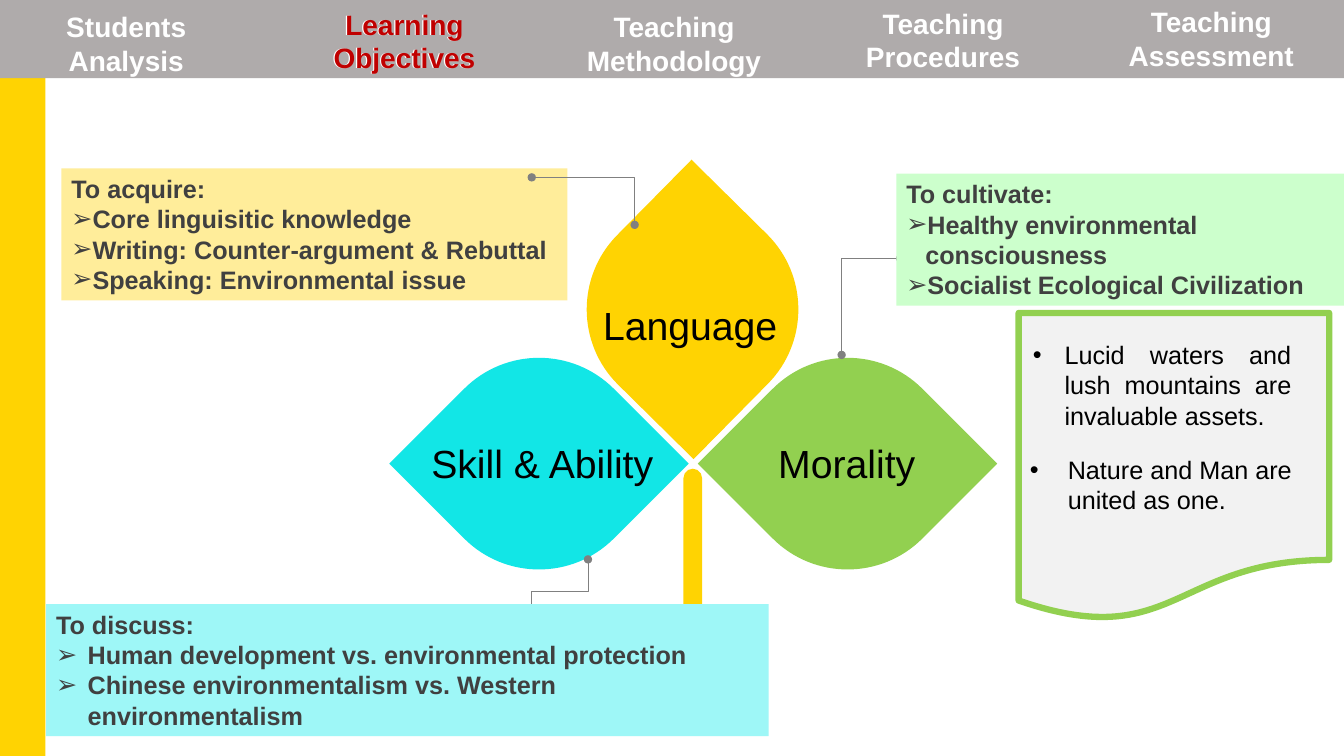
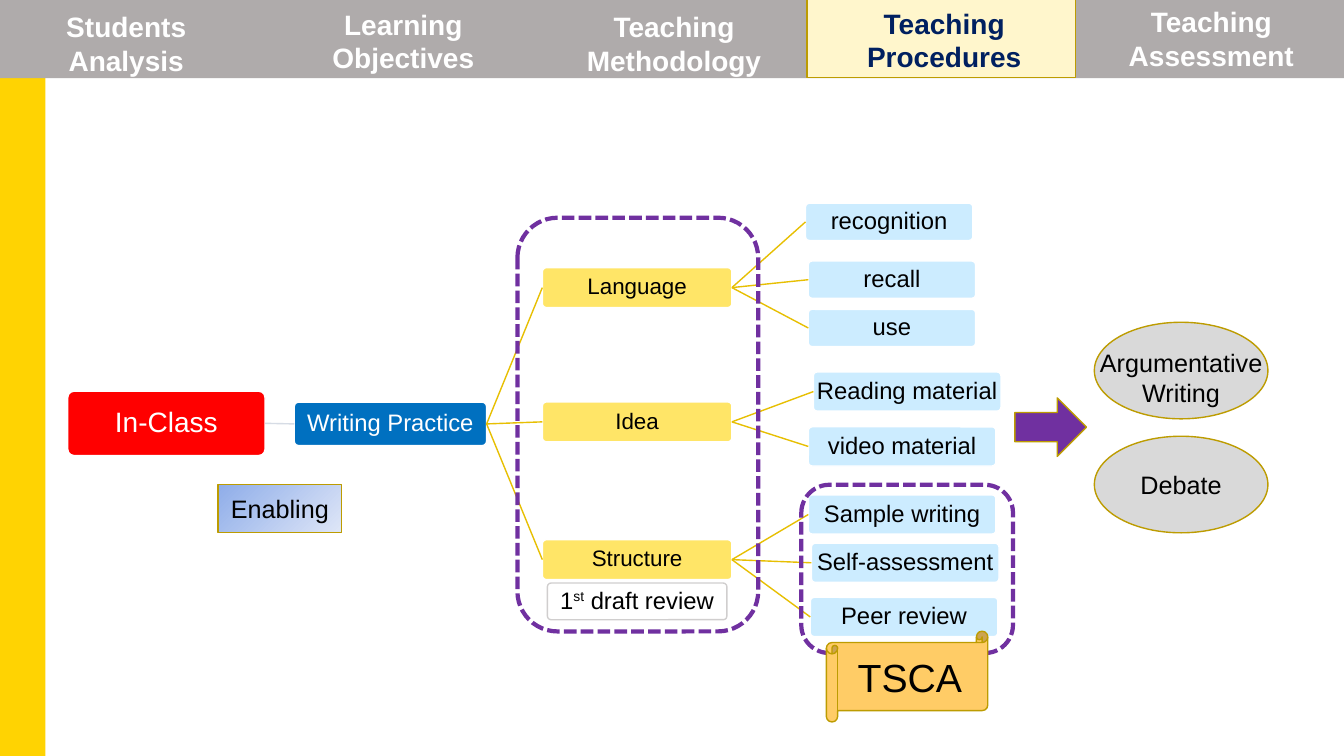
from dataclasses import dataclass

import pptx
import pptx.dml.color
import pptx.enum.dml
import pptx.enum.shapes
import pptx.enum.text
import pptx.oxml.ns
import pptx.util
from lxml import etree

Pt = pptx.util.Pt
SHAPES = pptx.enum.shapes.MSO_SHAPE
CONNECTORS = pptx.enum.shapes.MSO_CONNECTOR
ALIGN = pptx.enum.text.PP_ALIGN
ANCHOR = pptx.enum.text.MSO_ANCHOR
qn = pptx.oxml.ns.qn


@dataclass(frozen=True)
class Theme:
    font: str = "Arial"
    # Colours
    yellow: str = "FFD302"
    band: str = "AFABAB"
    white: str = "FFFFFF"
    black: str = "000000"
    dark: str = "404040"
    red: str = "C00000"
    navy: str = "002060"
    gold: str = "BD9C01"
    branch_line: str = "E7BF02"
    root_line: str = "D6DCE5"
    purple: str = "7030A0"
    green: str = "92D050"
    cyan: str = "12E6E6"
    grey: str = "808080"
    # Type sizes
    display: int = 28
    heading: int = 20
    body: int = 18
    node: int = 17
    branch: int = 16


THEME = Theme()
BAND_HEIGHT = 55.9
NODE_INSETS = (1, 1, 1, 1)
DEFAULT_INSETS = (7.2, 3.6, 7.2, 3.6)

# Tab text lines, left, top and width
TABS = [
    (["Students", "Analysis"], 0, 3.6, 191.5),
    (["Learning Objectives"], 192.4, 1.6, 191.5),
    (["Teaching Methodology"], 384.6, 3.6, 193.7),
    (["Teaching Procedures"], 576.8, 0.8, 193.7),
    (["Teaching Assessment"], 770.6, 0, 189.4),
]

# Branch: text, top, leaf size, leaves as (text, left, top)
BRANCHES = [
    ("Language", 191.2, (119.5, 26.6), [
        ("recognition", 575.4, 145.2),
        ("recall", 577.4, 186.5),
        ("use", 577.4, 221)]),
    ("Idea", 287.1, (134, 28), [
        ("Reading material", 581, 265.7),
        ("video material", 577.4, 304.9)]),
    ("Structure", 385.5, (134, 28), [
        ("Sample writing", 577.4, 353.5),
        ("Self-assessment", 579.6, 388),
        ("Peer review", 578.8, 426.7)]),
]


def rgb(color):
    return pptx.dml.color.RGBColor.from_string(color)


# Text
def set_font(font, size, color, bold=False):
    font.name = THEME.font
    font.size = Pt(size)
    font.bold = bold
    font.color.rgb = rgb(color)


def write(shape, lines, size, color=THEME.black, bold=False, align=ALIGN.CENTER,
          anchor=ANCHOR.MIDDLE, insets=DEFAULT_INSETS, wrap=True):
    frame = shape.text_frame
    frame.word_wrap = wrap
    frame.vertical_anchor = anchor
    (frame.margin_left, frame.margin_top,
     frame.margin_right, frame.margin_bottom) = map(Pt, insets)
    frame.text = "\n".join(lines)
    for paragraph in frame.paragraphs:
        paragraph.alignment = align
        for run in paragraph.runs:
            set_font(run.font, size, color, bold)
    return frame.paragraphs


def add_bullet(paragraph, character, indent):
    properties = paragraph._p.get_or_add_pPr()
    properties.set("marL", str(Pt(indent)))
    properties.set("indent", str(-Pt(indent)))
    etree.SubElement(properties, qn("a:buFont")).set("typeface", THEME.font)
    etree.SubElement(properties, qn("a:buChar")).set("char", character)


def add_label(slide, box, lines, size, color=THEME.black, bold=False, align=ALIGN.CENTER):
    label = slide.shapes.add_textbox(*map(Pt, box))
    return write(label, lines, size, color, bold, align, ANCHOR.TOP)


# Shapes and lines
def paint(shape, fill=None, line=None, width=1):
    shape.shadow.inherit = False
    if fill:
        shape.fill.solid()
        shape.fill.fore_color.rgb = rgb(fill)
    else:
        shape.fill.background()
    if line:
        shape.line.color.rgb = rgb(line)
        shape.line.width = Pt(width)
    else:
        shape.line.fill.background()


def add_block(slide, kind, box, fill=None, line=None, width=1):
    shape = slide.shapes.add_shape(kind, *map(Pt, box))
    paint(shape, fill, line, width)
    return shape


def add_line(slide, kind, begin, end, color, width):
    line = slide.shapes.add_connector(kind, *map(Pt, (*begin, *end)))
    line.line.color.rgb = rgb(color)
    line.line.width = Pt(width)
    etree.SubElement(line._element.spPr, qn("a:effectLst"))
    return line


def add_elbow(slide, begin, end, bend, upright=False):
    """Elbow with dotted ends; an upright one leaves its start vertically."""
    if upright:
        middle_x, middle_y = (begin[0] + end[0]) / 2, (begin[1] + end[1]) / 2
        begin, end = [(middle_x + y - middle_y, middle_y - x + middle_x)
                      for x, y in (begin, end)]
    line = add_line(slide, CONNECTORS.ELBOW, begin, end, THEME.grey, 0.5)
    properties = line._element.spPr
    if upright:
        properties.find(qn("a:xfrm")).set("rot", str(90 * 60000))
    guide = etree.SubElement(properties.find(qn("a:prstGeom")).find(qn("a:avLst")), qn("a:gd"))
    guide.set("name", "adj1")
    guide.set("fmla", f"val {round(bend * 100000)}")
    outline = properties.find(qn("a:ln"))
    for tag in ("a:headEnd", "a:tailEnd"):
        etree.SubElement(outline, qn(tag)).set("type", "oval")


def add_leaf(slide, center, rotation, fill):
    """Square with two opposite corners rounded off, turned onto its tip."""
    radius = 75.6
    corners = [(1, -1), (1, 0), (0, 1), (-1, 1), (-1, 0), (0, -1)]
    points = [(Pt(center[0] + x * radius), Pt(center[1] + y * radius)) for x, y in corners]
    builder = slide.shapes.build_freeform(*points[0], scale=1.0)
    builder.add_line_segments(points[1:], close=True)
    leaf = builder.convert_to_shape()
    # Turn the two diagonal cuts into quarter circles
    pull = 0.5523
    segments = list(leaf._element.iter(qn("a:lnTo")))
    for segment, controls in ((segments[1], [(1, pull), (pull, 1)]),
                              (segments[4], [(-1, -pull), (-pull, -1)])):
        segment.tag = qn("a:cubicBezTo")
        for index, (x, y) in enumerate(controls):
            control = etree.Element(qn("a:pt"))
            control.set("x", str(Pt((x + 1) * radius)))
            control.set("y", str(Pt((y + 1) * radius)))
            segment.insert(index, control)
    paint(leaf, fill)
    leaf.rotation = rotation


def add_goal(slide, box, fill, lines, indent):
    goal = add_block(slide, SHAPES.RECTANGLE, box, fill)
    paragraphs = write(goal, lines, THEME.body, THEME.dark, True, ALIGN.LEFT, ANCHOR.TOP)
    for paragraph in paragraphs[1:]:
        add_bullet(paragraph, "➢", indent)


def add_saying(slide, box, text, align, indent):
    add_bullet(add_label(slide, box, [text], THEME.body, align=align)[0], "•", indent)


def add_node(slide, box, text, fill, size=THEME.node, color=THEME.black, line=THEME.white):
    node = add_block(slide, SHAPES.ROUNDED_RECTANGLE, box, fill, line)
    node.adjustments[0] = 0.1
    for paragraph in write(node, [text], size, color, insets=NODE_INSETS):
        paragraph.line_spacing = 0.9
    return node


def link(slide, parent, child, color=THEME.branch_line):
    line = add_line(slide, CONNECTORS.STRAIGHT, (0, 0), (0, 0), color, 1)
    line.begin_connect(parent, 3)
    line.end_connect(child, 1)


def add_dashed_frame(slide, box):
    frame = add_block(slide, SHAPES.ROUNDED_RECTANGLE, box, None, THEME.purple, 3)
    frame.line.dash_style = pptx.enum.dml.MSO_LINE.SQUARE_DOT


# Shared parts
def start_slide(presentation):
    slide = presentation.slides.add_slide(presentation.slide_layouts[6])
    add_block(slide, SHAPES.RECTANGLE, (0, 0, 32.4, 540), THEME.yellow)
    return slide


def add_tabs(slide, active, active_color, active_fill=None):
    """Tab row; the active tab gets a filled box or a white edge on its text."""
    add_block(slide, SHAPES.RECTANGLE, (0, 0, 960, BAND_HEIGHT), THEME.band)
    for index, (lines, left, top, width) in enumerate(TABS):
        box = (left, top, width, 55.4)
        if index == active and active_fill:
            add_block(slide, SHAPES.RECTANGLE, (576.4, -0.6, 192, BAND_HEIGHT),
                      active_fill, THEME.gold)
        else:
            paragraphs = add_label(slide, box, lines, THEME.heading, THEME.white, True)
            if index == 0:
                paragraphs[0]._p.get_or_add_pPr().set("marR", str(Pt(11.1)))
        if index == active:
            add_label(slide, (left + 0.8, *box[1:]), lines, THEME.heading, active_color, True)


# Slides
def build_objectives(presentation):
    slide = start_slide(presentation)

    # Three leaves around a hub, with a stem
    hub_x, hub_y, reach = 495.2, 331.2, 110.2
    add_leaf(slide, (hub_x - 0.5, hub_y - reach), -45.4, THEME.yellow)
    add_leaf(slide, (hub_x + reach, hub_y), 45, THEME.green)
    add_leaf(slide, (hub_x - reach, hub_y), 45, THEME.cyan)
    stem = add_block(slide, SHAPES.ROUND_2_SAME_RECTANGLE, (488.2, 334.8, 13.3, 111.6),
                     THEME.yellow)
    stem.adjustments[0] = 0.5
    for text, left, top, width, align in (
            ("Language", 415.2, 211.9, 155.5, ALIGN.CENTER),
            ("Morality", 548.8, 310.3, 113, ALIGN.LEFT),
            ("Skill & Ability", 250.4, 310.3, 223.2, ALIGN.RIGHT)):
        add_label(slide, (left, top, width, 41), [text], THEME.display, align=align)

    # Goals and their pointers
    add_elbow(slide, (643, 184.6), (601.2, 253.5), 0.998)
    add_elbow(slide, (379.8, 445.7), (420, 399.6), 0.5, upright=True)
    add_goal(slide, (43.9, 120.3, 361.4, 94.3), "FFED9A",
             ["To acquire:", "Core linguisitic knowledge",
              "Writing: Counter-argument & Rebuttal", "Speaking: Environmental issue"], 14)
    add_elbow(slide, (379.8, 126.7), (453.3, 160.6), 0.999)
    add_goal(slide, (33, 431.6, 516, 94.3), "9EF7F7",
             ["To discuss:", "Human development vs. environmental protection",
              "Chinese environmentalism vs. Western environmentalism"], 22.5)
    add_goal(slide, (640.3, 124.1, 319.7, 94.3), "CCFFCC",
             ["To cultivate:", "Healthy environmental consciousness",
              "Socialist Ecological Civilization"], 13.6)

    # Sayings
    add_block(slide, SHAPES.FLOWCHART_DOCUMENT, (727.6, 223.5, 221.8, 220),
              "F2F2F2", THEME.green, 4.5)
    add_saying(slide, (730.8, 239, 198.7, 94.3),
               "Lucid waters and lush mountains are invaluable assets.", ALIGN.JUSTIFY, 22.5)
    add_saying(slide, (728.6, 321.1, 219.6, 51.1),
               "Nature and Man are united as one.", ALIGN.LEFT, 27)

    add_tabs(slide, 1, THEME.red)


def build_procedures(presentation):
    slide = start_slide(presentation)

    # Tree
    root = add_node(slide, (48.4, 279.4, 141, 46), "In-Class", "FF0000",
                    THEME.heading, THEME.white)
    practice = add_node(slide, (210.2, 287.3, 137.4, 31), "Writing Practice", "0070C0",
                        color=THEME.white)
    link(slide, root, practice, THEME.root_line)
    for text, top, leaf_size, leaves in BRANCHES:
        branch = add_node(slide, (387.4, top, 135.4, 28.5), text, "FFE567", THEME.branch)
        link(slide, practice, branch)
        for leaf_text, leaf_left, leaf_top in leaves:
            leaf = add_node(slide, (leaf_left, leaf_top, *leaf_size), leaf_text, "CCECFF")
            link(slide, branch, leaf)

    # Review note with a raised ordinal
    review = add_node(slide, (391, 416.5, 128.2, 26.2), "1", THEME.white, line="D0CECE")
    for text, baseline in (("st", 30000), (" draft review", 0)):
        run = review.text_frame.paragraphs[0].add_run()
        run.text = text
        set_font(run.font, THEME.node, THEME.black)
        run.font._element.set("baseline", str(baseline))

    # Frames and tags
    add_dashed_frame(slide, (572.4, 346.3, 151.2, 120.2))
    add_dashed_frame(slide, (369.6, 155.5, 172, 295.5))
    scroll = add_block(slide, SHAPES.HORIZONTAL_SCROLL, (590.3, 450.9, 115.3, 64.8),
                       "FFCC66", THEME.gold)
    write(scroll, ["TSCA"], THEME.display)
    enabling = add_block(slide, SHAPES.FLOWCHART_PROCESS, (155.7, 346.2, 88.3, 34),
                         "8FADE9", THEME.gold)
    enabling.fill.gradient()
    enabling.fill.gradient_angle = 315
    for stop, color in zip(enabling.fill.gradient_stops, ("8FADE9", "DEE6F7")):
        stop.color.rgb = rgb(color)
    write(enabling, ["Enabling"], THEME.body)

    # Outcomes
    for top, text in ((311.6, "Debate"), (230.2, "")):
        outcome = add_block(slide, SHAPES.OVAL, (781.7, top, 124, 69), "D9D9D9", THEME.gold)
        if text:
            write(outcome, [text], THEME.body)
    add_label(slide, (772, 244.4, 143.3, 51), ["Argumentative Writing"], THEME.body)
    add_block(slide, SHAPES.RIGHT_ARROW, (724.9, 284.2, 51.2, 41.8), THEME.purple, THEME.gold)

    add_tabs(slide, 3, THEME.navy, "FFF6CC")


def main():
    presentation = pptx.Presentation()
    presentation.slide_width = Pt(960)
    presentation.slide_height = Pt(540)
    build_objectives(presentation)
    build_procedures(presentation)
    presentation.save("out.pptx")


if __name__ == "__main__":
    main()
